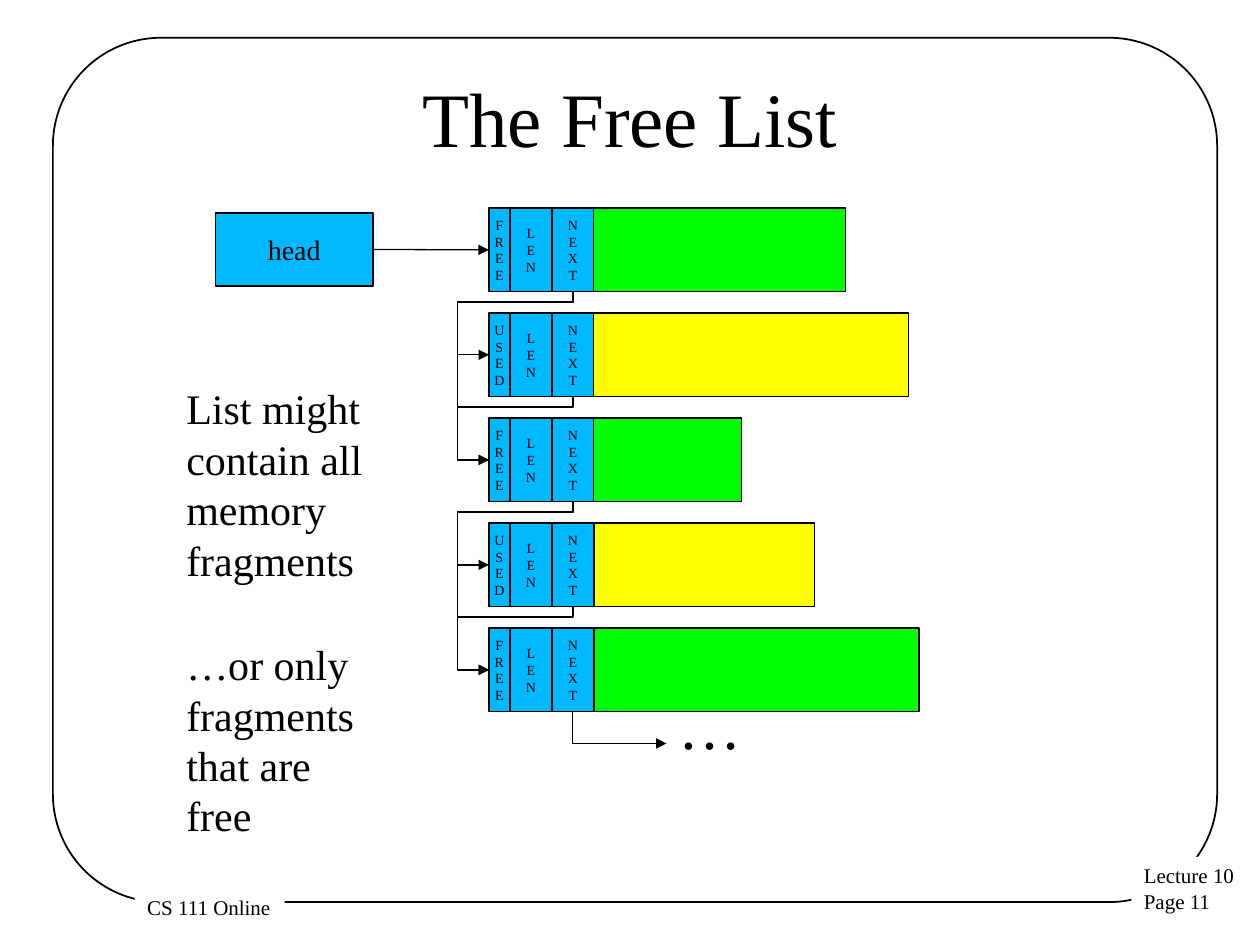
from lxml import etree
from pptx import Presentation
from pptx.dml.color import RGBColor
from pptx.enum import shapes, text
from pptx.oxml.ns import qn
from pptx.util import Inches, Pt

FONT, BLACK, WHITE = "Times New Roman", "000000", "FFFFFF"
BLUE, GREEN, YELLOW = "00B8FF", "00FF00", "FFFF00"
CENTER, LEFT = text.PP_ALIGN.CENTER, text.PP_ALIGN.LEFT

deck = Presentation()
deck.slide_width, deck.slide_height = Inches(10), Inches(7.5)
page = deck.slides.add_slide(deck.slide_layouts[5])


def add_box(x, y, w, h, words="", size=16, fill=None, line=0.75,
            align=CENTER, wrap=False, kind="RECTANGLE"):
    """Add a shape with its text; a line of 0 means no outline."""
    box = page.shapes.add_shape(shapes.MSO_SHAPE[kind], Inches(x), Inches(y), Inches(w), Inches(h))
    box.shadow.inherit = False
    if fill:
        box.fill.solid()
        box.fill.fore_color.rgb = RGBColor.from_string(fill)
    else:
        box.fill.background()
    if line:
        box.line.color.rgb = RGBColor.from_string(BLACK)
        box.line.width = Pt(line)
    else:
        box.line.fill.background()
    frame = box.text_frame
    frame.word_wrap = wrap
    frame.vertical_anchor = text.MSO_ANCHOR.MIDDLE if align == CENTER else text.MSO_ANCHOR.TOP
    frame.text = words
    for para in frame.paragraphs:
        para.alignment = align
        para.font.name, para.font.size = FONT, Pt(size)
        para.font.color.rgb = RGBColor.from_string(BLACK)
    return box


def add_arrow(start, end, preset="line", adjust=(), rot=0, flip=False):
    """Add an arrow; a rot of 90 or 270 degrees swaps the frame's sides."""
    (x1, y1), (x2, y2) = start, end
    if rot:
        mid_x, mid_y = (x1 + x2) / 2, (y1 + y2) / 2
        half_w, half_h = abs(y2 - y1) / 2, abs(x2 - x1) / 2
        x1, x2 = mid_x - half_w, mid_x + half_w
        y1, y2 = mid_y - half_h, mid_y + half_h
    kind = shapes.MSO_CONNECTOR.STRAIGHT if preset == "line" else shapes.MSO_CONNECTOR.ELBOW
    arrow = page.shapes.add_connector(kind, Inches(x1), Inches(y1), Inches(x2), Inches(y2))
    arrow.line.color.rgb = RGBColor.from_string(BLACK)
    arrow.line.width = Pt(0.75)
    props = arrow._element.spPr
    etree.SubElement(arrow.line._get_or_add_ln(), qn("a:tailEnd"), type="triangle")
    etree.SubElement(props, qn("a:effectLst"))
    geometry = props.find(qn("a:prstGeom"))
    geometry.set("prst", preset)
    guides = geometry.get_or_add_avLst()
    for number, share in enumerate(adjust, 1):
        etree.SubElement(guides, qn("a:gd"), name=f"adj{number}", fmla=f"val {round(share * 100000)}")
    if rot:
        props.find(qn("a:xfrm")).set("rot", str(rot * 60000))
    if flip:
        props.find(qn("a:xfrm")).set("flipH", "1")
    return arrow


# Frame and footers
frame_box = add_box(0.42, 0.3, 9.24, 6.86, line=1, kind="ROUNDED_RECTANGLE")
frame_box.adjustments[0] = 0.125
add_box(8.98, 6.8, 0.93, 0.51, "Lecture 10\nPage 11", 12, WHITE, 0, LEFT)
add_box(1.07, 7.05, 1.19, 0.3, "CS 111 Online", 12, WHITE, 0, LEFT)

# Title
title = page.shapes.title
title.left, title.top, title.width, title.height = Inches(0.5), Inches(0.3), Inches(9), Inches(1.25)
title.text_frame.text = "The Free List"
title.text_frame.vertical_anchor = text.MSO_ANCHOR.MIDDLE
heading = title.text_frame.paragraphs[0]
heading.alignment = CENTER
heading.font.name, heading.font.size = FONT, Pt(44)
heading.font.color.rgb = RGBColor.from_string(BLACK)

# Memory fragments: state, length and next fields, then the data
list_x, list_y = 3.88, 1.65
row_h, pitch = 2 / 3, 5 / 6
next_x = list_x + 2 / 3  # middle of the NEXT field
head_box = add_box(1.71, 1.69, 1.25, 0.58, "head", 16, BLUE)
state_boxes = []
for row, data_w in enumerate([2, 2.5, 1.17, 1.75, 2.58]):
    y = list_y + row * pitch
    state, colour = ("USED", YELLOW) if row % 2 else ("FREE", GREEN)
    x = list_x
    for word, width in [(state, 1 / 6), ("LEN", 1 / 3), ("NEXT", 1 / 3)]:
        field = add_box(x, y, width, row_h, "\n".join(word), 8, BLUE)
        if word == state:
            state_boxes.append(field)
        x += width
    add_box(x, y, data_w, row_h, fill=colour)

# Arrow from head to the first fragment
head_arrow = add_arrow((2.96, 1.98), (list_x, 1.98))
head_arrow.begin_connect(head_box, 3)
head_arrow.end_connect(state_boxes[0], 1)

# Links to the following fragment, and from free to free
for source, target in [(0, 1), (1, 2), (2, 3), (3, 4), (0, 2), (2, 4)]:
    start_y = list_y + source * pitch + row_h
    end_y = list_y + target * pitch + row_h / 2
    drop = 0.08 / (end_y - start_y)
    add_arrow((next_x, start_y), (list_x, end_y), "bentConnector4", (drop, 1.375), 90)

# The list goes on
last_y = list_y + 4 * pitch + row_h
add_arrow((next_x, last_y), (5.29, last_y + 0.25), "bentConnector2", rot=270, flip=True)
add_box(5.29, 5.4, 1.08, 0.7, "…", 36, line=0, align=LEFT, wrap=True)

# Remarks
add_box(1.38, 2.99, 1.75, 1.72, "List might contain all memory fragments", 24, line=0, align=LEFT, wrap=True)
add_box(1.38, 5.02, 1.75, 1.72, "…or only fragments that are free", 24, line=0, align=LEFT, wrap=True)

deck.save("out.pptx")
